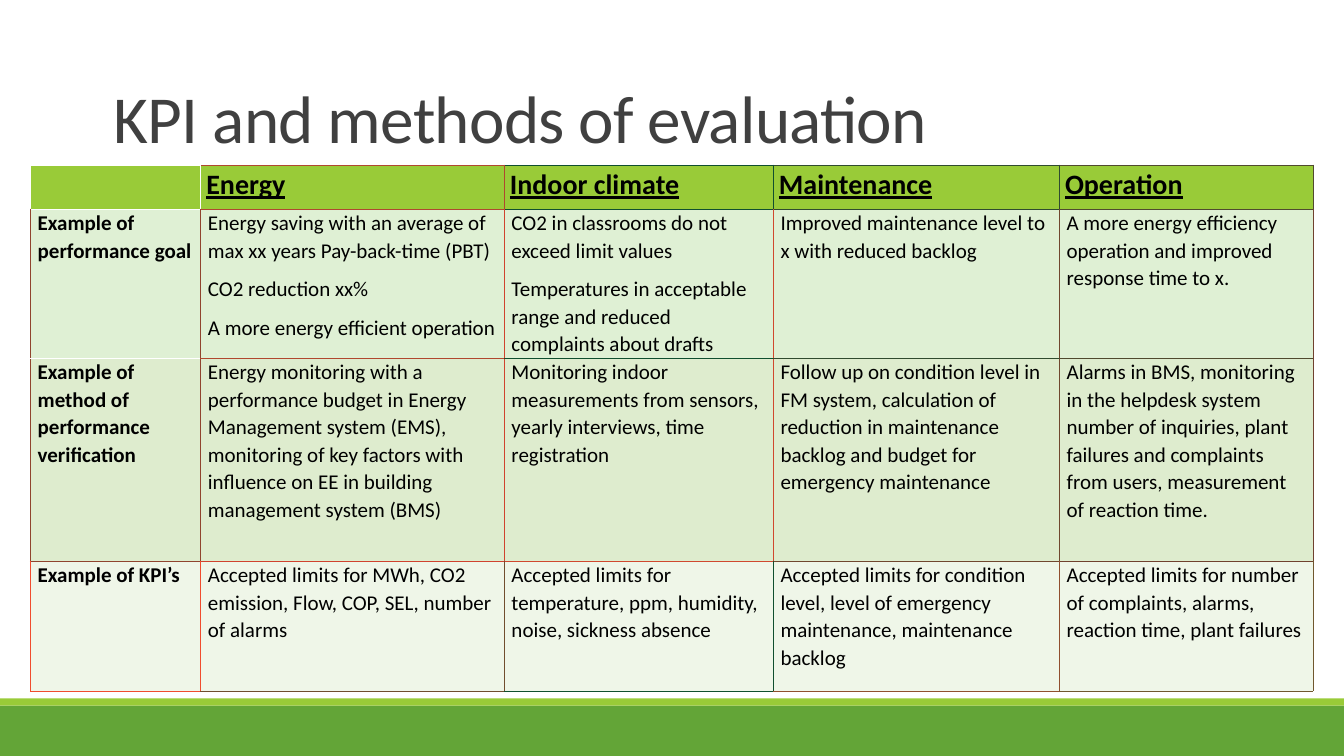
from lxml.etree import SubElement
from pptx import Presentation
from pptx.dml.color import RGBColor
from pptx.enum.shapes import MSO_SHAPE
from pptx.enum.text import MSO_ANCHOR
from pptx.oxml.ns import qn
from pptx.util import Cm, Pt

WIDE, HIGH = 33.87, 19.05
LIME, GREEN = "99CB38", "63A537"

HEADS = ["", "Energy", "Indoor climate", "Maintenance", "Operation"]
# Paragraphs within a cell are separated by a line break.
ROWS = [
    ["Example of performance goal",
     "Energy saving with an average of max xx years Pay-back-time (PBT)\n"
     "CO2 reduction xx%\nA more energy efficient operation",
     "CO2 in classrooms do not exceed limit values\n"
     "Temperatures in acceptable range and reduced complaints about drafts",
     "Improved maintenance level to x with reduced backlog",
     "A more energy efficiency operation and improved response time to x."],
    ["Example of method of performance verification",
     "Energy monitoring with a performance budget in Energy Management system "
     "(EMS), monitoring of key factors with influence on EE in building "
     "management system (BMS)",
     "Monitoring indoor measurements from sensors, yearly interviews, "
     "time registration",
     "Follow up on condition level in FM system, calculation of reduction in "
     "maintenance backlog and budget for emergency maintenance",
     "Alarms in BMS, monitoring in the helpdesk system number of inquiries, "
     "plant failures and complaints from users, measurement of reaction time."],
    ["Example of KPI’s",
     "Accepted limits for MWh, CO2 emission, Flow, COP, SEL, number of alarms",
     "Accepted limits for temperature, ppm, humidity, noise, sickness absence",
     "Accepted limits for condition level, level of emergency maintenance, "
     "maintenance backlog",
     "Accepted limits for number of complaints, alarms, reaction time, "
     "plant failures"],
]
WIDTHS = [4.29, 7.65, 6.78, 7.21, 6.4]
HEIGHTS = [1.11, 3.76, 5.12, 3.28]
FILLS = [LIME, "DFF0D4", "DEECCE", "EFF6E8"]

TOP = ["FFFFFF", "B0482F", "104F2F", "304B2F", "504A2F"]
MID = ["90442E", "D0422E", "D0482E", "70472E", "70412E"]
LOW = ["F04C2E", "704D2E", "104F2E", "904F2E", "70572E"]
ACROSS = [TOP, TOP, TOP, MID, LOW]
# The left edge of each row takes the colour of its first inner edge.
DOWN = [tones[:1] + tones for tones in (TOP, MID, MID, LOW)]


def color(code):
    return RGBColor.from_string(code)


def write(frame, text, size=15, tone="000000", bold=False, under=False,
          lead=None, after=None, track=None):
    """Fill a text frame, one paragraph per line of text."""
    frame.word_wrap = True
    for i, line in enumerate(text.split("\n")):
        para = frame.paragraphs[0] if i == 0 else frame.add_paragraph()
        para.line_spacing = lead
        if after is not None:
            para.space_after = Pt(after)
        run = para.add_run()
        run.text = line
        font = run.font
        font.name, font.size = "Calibri", Pt(size)
        font.bold, font.underline = bold, under
        font.color.rgb = color(tone)
        if track is not None:
            run._r.get_or_add_rPr().set("spc", str(track))


def edge(cell, tones):
    """Draw the left, right, top and bottom borders, in that order."""
    props = cell._tc.get_or_add_tcPr()
    for i, (side, tone) in enumerate(zip("LRTB", tones)):
        line = SubElement(props, qn(f"a:ln{side}"), w=str(Pt(0.25)))
        fill = SubElement(line, qn("a:solidFill"))
        SubElement(fill, qn("a:srgbClr"), val=tone)
        props.insert(i, line)


class Deck:
    """Holds the presentation and its current slide."""

    def __init__(self):
        self.show = Presentation()
        self.show.slide_width, self.show.slide_height = Cm(WIDE), Cm(HIGH)
        self.slide = self.show.slides.add_slide(self.show.slide_layouts[6])

    def band(self, top, high, tone):
        shape = self.slide.shapes.add_shape(
            MSO_SHAPE.RECTANGLE, 0, Cm(top), Cm(WIDE), Cm(high))
        shape.shadow.inherit = False
        shape.fill.solid()
        shape.fill.fore_color.rgb = color(tone)
        shape.line.fill.background()

    def title(self, text, left, top, wide, high):
        box = self.slide.shapes.add_textbox(
            Cm(left), Cm(top), Cm(wide), Cm(high))
        box.text_frame.vertical_anchor = MSO_ANCHOR.BOTTOM
        write(box.text_frame, text, size=48, tone="404040", lead=0.85, track=-50)

    def grid(self, rows, left, top):
        table = self.slide.shapes.add_table(
            len(rows), len(WIDTHS), Cm(left), Cm(top),
            Cm(sum(WIDTHS)), Cm(sum(HEIGHTS))).table
        table.first_row = table.horz_banding = False
        for col, wide in zip(table.columns, WIDTHS):
            col.width = Cm(wide)
        for r, texts in enumerate(rows):
            table.rows[r].height = Cm(HEIGHTS[r])
            for c, text in enumerate(texts):
                cell = table.cell(r, c)
                self.cell(cell, text, r == 0, c == 0, FILLS[r])
                edge(cell, [DOWN[r][c], DOWN[r][c + 1],
                            ACROSS[r][c], ACROSS[r + 1][c]])

    def cell(self, cell, text, head, first, tone):
        cell.fill.solid()
        cell.fill.fore_color.rgb = color(tone)
        side, rim = (0.15, 0.08) if head else (0.19, 0)
        cell.margin_left = cell.margin_right = Cm(side)
        cell.margin_top = cell.margin_bottom = Cm(rim)
        if head and text:
            write(cell.text_frame, text, size=20, bold=True, under=True)
        elif text:
            write(cell.text_frame, text, bold=first, lead=1.07, after=8)


def main():
    deck = Deck()
    deck.band(17.78, 1.27, GREEN)
    deck.band(17.6, 0.18, LIME)
    deck.title("KPI and methods of evaluation", 2.62, 2.03, 29.62, 2.06)
    deck.grid([HEADS] + ROWS, 0.76, 4.15)
    deck.show.save("out.pptx")


if __name__ == "__main__":
    main()
